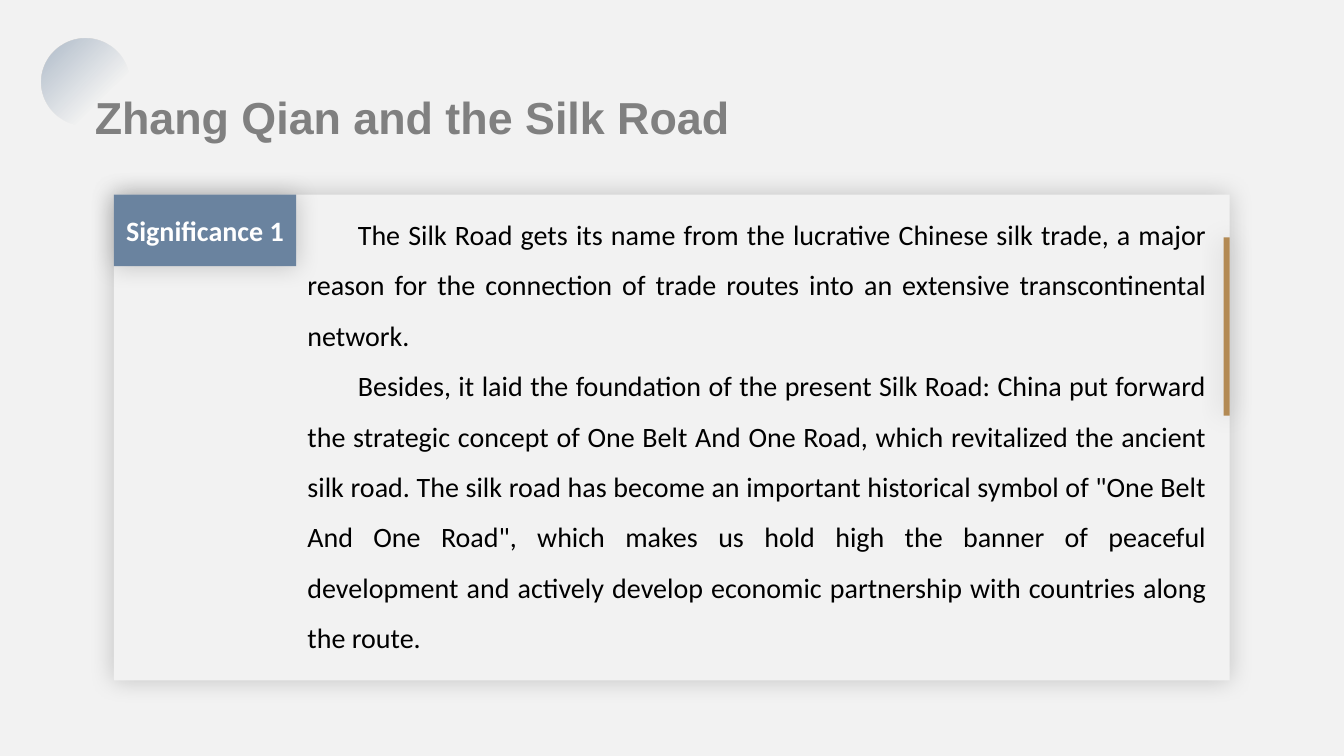
from dataclasses import dataclass

from lxml.etree import SubElement
from pptx import Presentation
from pptx.dml.color import RGBColor
from pptx.enum.shapes import MSO_SHAPE
from pptx.enum.text import MSO_ANCHOR, MSO_AUTO_SIZE, PP_ALIGN
from pptx.oxml import parse_xml
from pptx.oxml.ns import nsdecls, qn
from pptx.shapes.autoshape import Shape
from pptx.slide import Slide
from pptx.text.text import TextFrame, _Paragraph
from pptx.util import Inches, Pt


@dataclass(frozen=True)
class Theme:
    paper: str = "F2F2F2"
    blue: str = "6A839F"
    gold: str = "B38A54"
    gray: str = "808080"
    black: str = "000000"
    white: str = "FFFFFF"
    head: str = "Arial"
    text: str = "Calibri"
    big: int = 32
    small: int = 20


@dataclass(frozen=True)
class Box:
    col: float
    row: float
    wide: float
    high: float


@dataclass(frozen=True)
class Card:
    box: Box
    color: str
    label: str = ""


THEME = Theme()
COLS, ROWS = 80, 45
WIDE, HIGH = Inches(13.33), Inches(7.5)

CIRCLE = Box(2.46, 2.28, 5.22, 5.22)
TITLE = Box(5.04, 5.04, 40.86, 3.84)
BODY = Box(17.7, 11.64, 54.72, 27.54)
CARDS = (
    Card(Box(6.78, 11.58, 66.42, 28.92), THEME.paper),
    Card(Box(6.78, 11.58, 10.86, 4.26), THEME.blue, "Significance 1"),
    Card(Box(72.84, 14.13, 0.36, 10.62), THEME.gold),
)
STORY = (
    "The Silk Road gets its name from the lucrative Chinese silk trade, a major "
    "reason for the connection of trade routes into an extensive transcontinental network.",
    "Besides, it laid the foundation of the present Silk Road: China put forward "
    "the strategic concept of One Belt And One Road, which revitalized the ancient "
    "silk road. The silk road has become an important historical symbol of "
    '"One Belt And One Road", which makes us hold high the banner of peaceful '
    "development and actively develop economic partnership with countries along the route.",
)


def place(shape: Shape, box: Box) -> None:
    shape.left = round(box.col * WIDE / COLS)
    shape.top = round(box.row * HIGH / ROWS)
    shape.width = round(box.wide * WIDE / COLS)
    shape.height = round(box.high * HIGH / ROWS)


def style(para: _Paragraph, face: str, size: int, color: str, bold: bool = False) -> None:
    for run in para.runs:
        run.font.name = face
        run.font.size = Pt(size)
        run.font.bold = bold
        run.font.color.rgb = RGBColor.from_string(color)


def setup(frame: TextFrame, anchor: MSO_ANCHOR) -> None:
    frame.word_wrap = True
    frame.auto_size = MSO_AUTO_SIZE.NONE
    frame.vertical_anchor = anchor


def add_shape(slide: Slide, kind: MSO_SHAPE, box: Box) -> Shape:
    shape = slide.shapes.add_shape(kind, 0, 0, 0, 0)
    place(shape, box)
    shape.shadow.inherit = False
    shape.line.fill.background()
    return shape


def add_circle(slide: Slide) -> None:
    shape = add_shape(slide, MSO_SHAPE.OVAL, CIRCLE)
    stops = "".join(
        f'<a:gs pos="{spot * 1000}"><a:srgbClr val="{THEME.blue}">'
        f'<a:alpha val="{alpha * 1000}"/></a:srgbClr></a:gs>'
        for spot, alpha in ((0, 50), (69, 0))
    )
    fill = parse_xml(
        f'<a:gradFill {nsdecls("a")} rotWithShape="1"><a:gsLst>{stops}</a:gsLst>'
        '<a:lin ang="2700000" scaled="0"/></a:gradFill>'
    )
    shape.element.spPr.find(qn("a:prstGeom")).addnext(fill)


def add_card(slide: Slide, card: Card) -> None:
    shape = add_shape(slide, MSO_SHAPE.RECTANGLE, card.box)
    shape.fill.solid()
    shape.fill.fore_color.rgb = RGBColor.from_string(card.color)
    glow = parse_xml(
        f'<a:outerShdw {nsdecls("a")} blurRad="{Pt(18)}" dist="0" dir="0" '
        f'algn="ctr" rotWithShape="0"><a:srgbClr val="{THEME.black}">'
        '<a:alpha val="20000"/></a:srgbClr></a:outerShdw>'
    )
    shape.element.spPr.find(qn("a:effectLst")).append(glow)
    if card.label:
        frame = shape.text_frame
        setup(frame, MSO_ANCHOR.MIDDLE)
        frame.margin_left = frame.margin_right = 0
        frame.text = card.label
        para = frame.paragraphs[0]
        para.alignment = PP_ALIGN.CENTER
        style(para, THEME.text, THEME.small, THEME.white, True)


def fill_title(shape: Shape) -> None:
    place(shape, TITLE)
    frame = shape.text_frame
    setup(frame, MSO_ANCHOR.TOP)
    frame.text = "Zhang Qian and the Silk Road"
    para = frame.paragraphs[0]
    para.alignment = PP_ALIGN.LEFT
    style(para, THEME.head, THEME.big, THEME.gray, True)


def fill_body(shape: Shape) -> None:
    place(shape, BODY)
    frame = shape.text_frame
    setup(frame, MSO_ANCHOR.TOP)
    frame.text = "\n".join(STORY)
    for para in frame.paragraphs:
        para.alignment = PP_ALIGN.JUSTIFY
        para.line_spacing = 1.5
        para.space_before = Pt(0)
        props = para._p.get_or_add_pPr()
        props.set("marL", "0")
        props.set("indent", str(Inches(0.5)))
        SubElement(props, qn("a:buNone"))
        style(para, THEME.text, THEME.small, THEME.black)


def main() -> None:
    deck = Presentation()
    deck.slide_width, deck.slide_height = WIDE, HIGH
    slide = deck.slides.add_slide(deck.slide_layouts[1])
    back = slide.background.fill
    back.solid()
    back.fore_color.rgb = RGBColor.from_string(THEME.paper)
    title, body = slide.placeholders
    add_circle(slide)
    for card in CARDS:
        add_card(slide, card)
    fill_title(title)
    fill_body(body)
    for shape in (title, body):
        slide.shapes.element.append(shape.element)
    deck.save("out.pptx")


if __name__ == "__main__":
    main()
